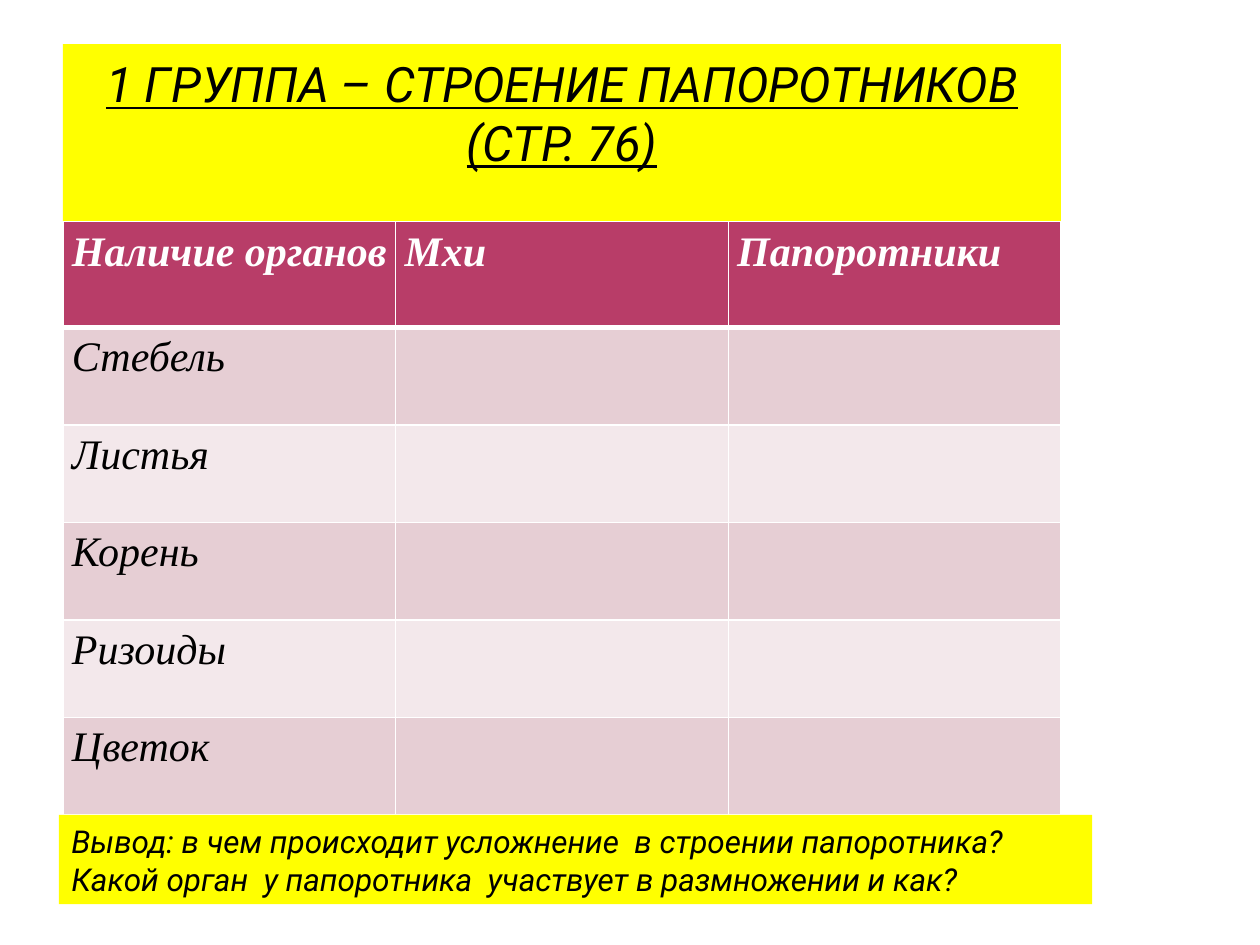
import pptx
import pptx.dml.color
import pptx.enum.shapes
import pptx.enum.text
import pptx.oxml
import pptx.oxml.ns
import pptx.util

Cm = pptx.util.Cm
Pt = pptx.util.Pt
ALIGN = pptx.enum.text.PP_ALIGN
ANCHOR = pptx.enum.text.MSO_ANCHOR

COLORS = {
    "panel": "FFFF00",
    "header": "B83D68",
    "band_dark": "E6CED4",
    "band_light": "F3E8EB",
    "border": "FFFFFF",
    "text": "000000",
    "header_text": "FFFFFF",
}
HEADERS = ["Наличие органов", "Мхи", "Папоротники"]
ORGANS = ["Стебель", "Листья", "Корень", "Ризоиды", "Цветок"]
TITLE = "1 ГРУППА – СТРОЕНИЕ ПАПОРОТНИКОВ (СТР. 76)"
CONCLUSION = [
    "Вывод: в чем происходит усложнение  в строении папоротника?",
    "Какой орган  у папоротника  участвует в размножении и как?",
]


def rgb(name):
    return pptx.dml.color.RGBColor.from_string(COLORS[name])


def write_text(paragraph, text, *, size, font="Roboto", color="text", bold=False,
               underline=False, align=ALIGN.LEFT, line_spacing=None, space_after=None):
    paragraph.alignment = align
    if line_spacing is not None:
        paragraph.line_spacing = line_spacing
    if space_after is not None:
        paragraph.space_after = Pt(space_after)
    run = paragraph.add_run()
    run.text = text
    run.font.name = font
    run.font.size = Pt(size)
    run.font.bold = bold
    run.font.italic = True
    run.font.underline = underline
    run.font.color.rgb = rgb(color)


def add_panel(slide, box, lines, anchor, **text_format):
    shape = slide.shapes.add_shape(
        pptx.enum.shapes.MSO_SHAPE.RECTANGLE, *(Cm(length) for length in box))
    shape.shadow.inherit = False
    shape.fill.solid()
    shape.fill.fore_color.rgb = rgb("panel")
    shape.line.fill.background()
    frame = shape.text_frame
    frame.word_wrap = True
    frame.vertical_anchor = anchor
    for index, line in enumerate(lines):
        paragraph = frame.add_paragraph() if index else frame.paragraphs[0]
        write_text(paragraph, line, **text_format)
    return shape


def add_title(slide, box):
    shape = add_panel(slide, box, [TITLE], ANCHOR.TOP, size=27.9,
                      underline=True, align=ALIGN.CENTER)
    frame = shape.text_frame
    frame.margin_left = frame.margin_right = Cm(0.13)
    frame.margin_top = Cm(0.2)
    frame.margin_bottom = 0


def add_conclusion(slide, box):
    add_panel(slide, box, CONCLUSION, ANCHOR.MIDDLE, size=18)


def set_borders(cell, top, bottom):
    properties = cell._tc.get_or_add_tcPr()
    for side, width in (("L", 1), ("R", 1), ("T", top), ("B", bottom)):
        properties.append(pptx.oxml.parse_xml(
            f'<a:ln{side} {pptx.oxml.ns.nsdecls("a")} w="{Pt(width)}"><a:solidFill>'
            f'<a:srgbClr val="{COLORS["border"]}"/></a:solidFill></a:ln{side}>'))


def add_comparison_table(slide, box, header_height):
    left, top, width, height = box
    rows = [HEADERS] + [[organ, "", ""] for organ in ORGANS]
    table = slide.shapes.add_table(
        len(rows), len(HEADERS), Cm(left), Cm(top), Cm(width), Cm(height)).table
    for column in table.columns:
        column.width = Cm(width / len(HEADERS))
    for row_index, texts in enumerate(rows):
        is_header = row_index == 0
        row_height = header_height if is_header else (height - header_height) / len(ORGANS)
        table.rows[row_index].height = Cm(row_height)
        band = "band_dark" if row_index % 2 else "band_light"
        for column_index, text in enumerate(texts):
            cell = table.cell(row_index, column_index)
            set_borders(cell, top=3 if row_index == 1 else 1, bottom=3 if is_header else 1)
            cell.fill.solid()
            cell.fill.fore_color.rgb = rgb("header" if is_header else band)
            cell.margin_left = cell.margin_right = Cm(0.18)
            cell.margin_top = cell.margin_bottom = 0
            if text:
                write_text(cell.text_frame.paragraphs[0], text, size=24,
                           font="Times New Roman", bold=is_header,
                           color="header_text" if is_header else "text",
                           line_spacing=1.15, space_after=10)


def main():
    presentation = pptx.Presentation()
    presentation.slide_width = Cm(25.4)
    presentation.slide_height = Cm(19.05)
    slide = presentation.slides.add_slide(presentation.slide_layouts[6])
    add_title(slide, (1.27, 0.89, 20.12, 3.68))
    add_comparison_table(slide, (1.27, 4.47, 20.12, 11.96), header_height=2.13)
    add_conclusion(slide, (1.19, 16.43, 20.83, 1.8))
    presentation.save("out.pptx")


if __name__ == "__main__":
    main()
